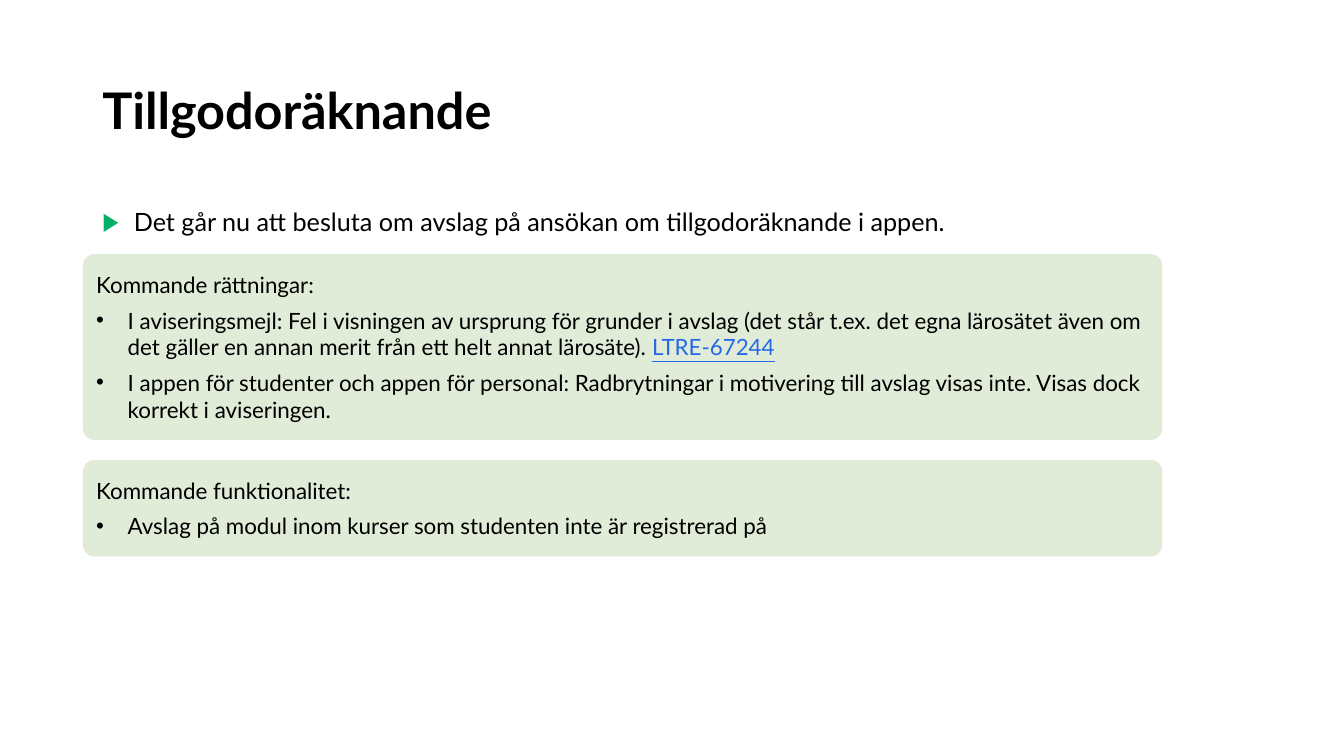
from lxml import etree
from pptx import Presentation
from pptx.dml.color import RGBColor
from pptx.enum.shapes import MSO_SHAPE
from pptx.enum.text import MSO_ANCHOR, PP_ALIGN
from pptx.oxml.ns import qn
from pptx.util import Pt

ROUNDED = MSO_SHAPE.ROUNDED_RECTANGLE
TOP, MIDDLE = MSO_ANCHOR.TOP, MSO_ANCHOR.MIDDLE
LEFT = PP_ALIGN.LEFT

PX = 9525
THEME = {
    "font": "Lato", "bullet_font": "Arial",
    "text": "000000", "link": "2469E6", "accent": "04B067", "card": "E0EBD8",
    "title": 36, "body": 18, "small": 16,
}
INDENT = 30


def px(*values):
    return [v * PX for v in values]


def add_text(tf, text, size, first=False, bold=False, bullet=None,
             bullet_color="text", before=6, spacing=None, link=None):
    p = tf.paragraphs[0] if first else tf.add_paragraph()
    p.alignment = LEFT
    if bullet:
        pPr = p._p.get_or_add_pPr()
        pPr.set("marL", str(INDENT * PX))
        pPr.set("indent", str(-INDENT * PX))
        clr = etree.SubElement(pPr, qn("a:buClr"))
        etree.SubElement(clr, qn("a:srgbClr"), val=THEME[bullet_color])
        etree.SubElement(pPr, qn("a:buFont"), typeface=THEME["bullet_font"])
        etree.SubElement(pPr, qn("a:buChar"), char=bullet)
    if not first:
        p.space_before = Pt(before)
    if spacing:
        p.line_spacing = spacing
    for part, color in ((text, "text"), (link, "link")):
        if part:
            r = p.add_run()
            r.text = part
            r.font.name = THEME["font"]
            r.font.size = Pt(THEME[size])
            r.font.bold = bold
            r.font.underline = color == "link"
            r.font.color.rgb = RGBColor.from_string(THEME[color])


prs = Presentation()
prs.slide_width, prs.slide_height = px(1280, 720)
s = prs.slides.add_slide(prs.slide_layouts[6])

boxes = [
    (192, 457, TOP, "Det går nu att besluta om avslag på ansökan om tillgodoräknande i appen.",
     {"size": "body", "bullet": "▶", "bullet_color": "accent"}),
    (38, 139, MIDDLE, "Tillgodoräknande",
     {"size": "title", "bold": True, "spacing": 0.9}),
]
for top, height, anchor, text, style in boxes:
    tf = s.shapes.add_textbox(*px(88, top, 1104, height)).text_frame
    tf.word_wrap = True
    tf.vertical_anchor = anchor
    add_text(tf, text, first=True, **style)

cards = [
    (242, 177, "Kommande rättningar:", [
        ("I aviseringsmejl: Fel i visningen av ursprung för grunder i avslag "
         "(det står t.ex. det egna lärosätet även om det gäller en annan merit "
         "från ett helt annat lärosäte). ", "LTRE-67244"),
        ("I appen för studenter och appen för personal: Radbrytningar i motivering "
         "till avslag visas inte. Visas dock korrekt i aviseringen.", None),
    ]),
    (438, 92, "Kommande funktionalitet:", [
        ("Avslag på modul inom kurser som studenten inte är registrerad på", None),
    ]),
]
for top, height, heading, items in cards:
    sp = s.shapes.add_shape(ROUNDED, *px(79, top, 1028, height))
    sp.adjustments[0] = 11 / height
    sp.shadow.inherit = False
    sp.fill.solid()
    sp.fill.fore_color.rgb = RGBColor.from_string(THEME["card"])
    sp.line.fill.background()
    tf = sp.text_frame
    tf.word_wrap = True
    tf.vertical_anchor = MIDDLE
    add_text(tf, heading, "small", first=True)
    for text, link in items:
        add_text(tf, text, "small", bullet="•", link=link)

prs.save("out.pptx")
